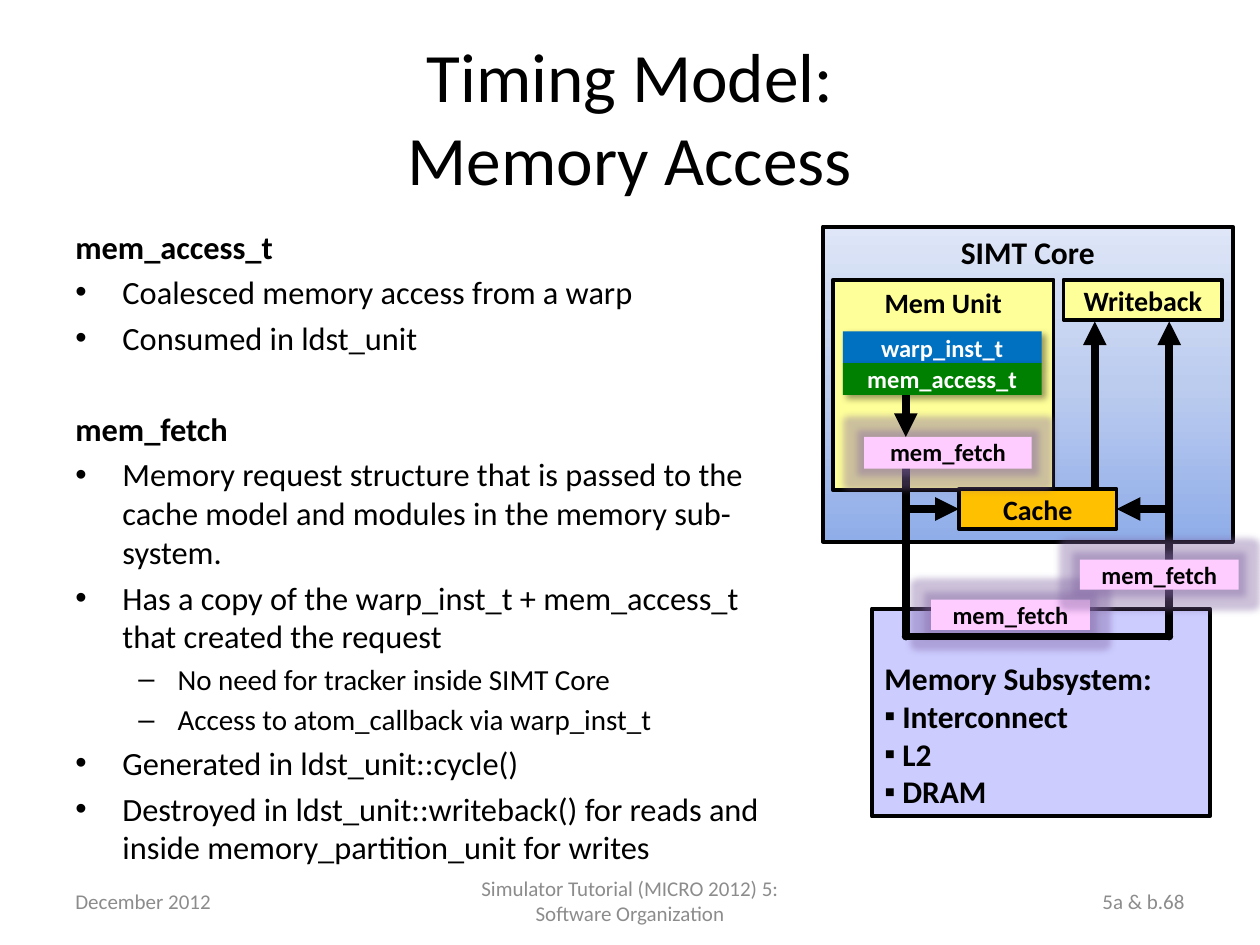
from copy import deepcopy

from lxml import etree
from pptx import Presentation
from pptx.dml.color import RGBColor
from pptx.enum.shapes import MSO_CONNECTOR, MSO_SHAPE
from pptx.enum.text import MSO_ANCHOR, PP_ALIGN
from pptx.oxml import parse_xml
from pptx.oxml.ns import qn
from pptx.util import Cm, Pt

LEFT, CENTER, RIGHT = PP_ALIGN.LEFT, PP_ALIGN.CENTER, PP_ALIGN.RIGHT
TOP, MIDDLE, BOTTOM = MSO_ANCHOR.TOP, MSO_ANCHOR.MIDDLE, MSO_ANCHOR.BOTTOM
RECTANGLE, STRAIGHT = MSO_SHAPE.RECTANGLE, MSO_CONNECTOR.STRAIGHT

FONT = "Calibri"
COLORS = {
    "black": "000000",
    "white": "FFFFFF",
    "gray": "8C8C8C",
    "lavender": "CCCCFF",
    "yellow": "FFFF99",
    "orange": "FFC000",
    "pink": "FFCCFF",
    "blue": "0070C0",
    "green": "008000",
    "glow": "8064A2",
    "core_bottom": "8FADE9",
    "core_middle": "BCCCEF",
    "core_top": "DEE6F7",
}
BODY = [
    ("heading", "mem_access_t"),
    ("bullet", "Coalesced memory access from a warp"),
    ("bullet", "Consumed in ldst_unit"),
    ("heading", "mem_fetch"),
    ("bullet", "Memory request structure that is passed to the cache model "
               "and modules in the memory sub-system."),
    ("bullet", "Has a copy of the warp_inst_t + mem_access_t that created the request"),
    ("dash", "No need for tracker inside SIMT Core"),
    ("dash", "Access to atom_callback via warp_inst_t"),
    ("bullet", "Generated in ldst_unit::cycle()"),
    ("bullet", "Destroyed in ldst_unit::writeback() for reads and "
               "inside memory_partition_unit for writes"),
]
BODY_STYLES = {
    "heading": (18.5, True, None, 0.95, 0.95),
    "bullet": (18.5, False, "•", 0.95, 0.95),
    "dash": (16.6, False, "–", 2.06, 0.79),
}
MEM_FETCH_BOXES = {
    "subsystem": (18.77, 12.09, 3.2, 0.61),
    "unit": (17.42, 8.81, 3.38, 0.64),
    "return": (21.77, 11.28, 3.2, 0.61),
}
REQUEST_X, RETURN_X, CACHE_Y, TURN_Y = 18.26, 23.57, 10.26, 12.83
WRITEBACK_BOTTOM = 6.48


def rgb(name):
    return RGBColor.from_string(COLORS[name])


def style_paragraph(paragraph, size, color="black", bold=False, align=LEFT):
    font = paragraph.font
    font.name, font.size, font.bold = FONT, Pt(size), bold
    font.color.rgb = rgb(color)
    paragraph.alignment = align


def add_bullet(paragraph, character, margin, hanging):
    properties = paragraph._p.get_or_add_pPr()
    properties.set("marL", str(Cm(margin)))
    properties.set("indent", str(-Cm(hanging)))
    if character:
        bullet_font = etree.SubElement(properties, qn("a:buFont"))
        bullet_font.set("typeface", "Arial")
        etree.SubElement(properties, qn("a:buChar")).set("char", character)


def add_effect(shape, kind, color, alpha, **attributes):
    effects = shape._element.spPr.get_or_add_effectLst()
    effect = etree.SubElement(effects, qn(f"a:{kind}"))
    for name, value in attributes.items():
        effect.set(name, str(value))
    tint = etree.SubElement(effect, qn("a:srgbClr"), val=COLORS[color])
    etree.SubElement(tint, qn("a:alpha"), val=str(alpha * 1000))


def set_title(slide):
    title = slide.shapes.title
    title.left, title.top, title.width, title.height = Cm(1.27), Cm(0.76), Cm(22.86), Cm(3.18)
    title.text_frame.text = "Timing Model:\vMemory Access"
    title.text_frame.vertical_anchor = MIDDLE
    style_paragraph(title.text_frame.paragraphs[0], 39.6, align=CENTER)


def add_text_box(slide, box):
    frame = slide.shapes.add_textbox(*map(Cm, box)).text_frame
    frame.word_wrap = True
    return frame


def add_body(slide):
    frame = add_text_box(slide, (1.27, 4.45, 15.09, 12.57))
    for index, (kind, text) in enumerate(BODY):
        paragraph = frame.add_paragraph() if index else frame.paragraphs[0]
        size, bold, character, margin, hanging = BODY_STYLES[kind]
        paragraph.text = text
        style_paragraph(paragraph, size, bold=bold)
        paragraph.space_before = Pt(30 if index and kind == "heading" else 0.2 * size)
        add_bullet(paragraph, character, margin, hanging)


def add_footer(slide, left, width, text, align):
    frame = add_text_box(slide, (left, 17.65, width, 1.02))
    frame.vertical_anchor = MIDDLE
    frame.text = text
    style_paragraph(frame.paragraphs[0], 12, "gray", align=align)


def add_box(slide, box, text, size, fill, font_color="black", outlined=True,
            anchor=MIDDLE, align=CENTER):
    shape = slide.shapes.add_shape(RECTANGLE, *map(Cm, box))
    shape.shadow.inherit = False
    shape.fill.solid()
    shape.fill.fore_color.rgb = rgb(fill)
    if outlined:
        shape.line.color.rgb = rgb("black")
        shape.line.width = Pt(2.25)
    else:
        shape.line.fill.background()
    frame = shape.text_frame
    frame.word_wrap = False
    frame.vertical_anchor = anchor
    frame.text = text
    for paragraph in frame.paragraphs:
        style_paragraph(paragraph, size, font_color, True, align)
    return shape


def add_core(slide):
    core = add_box(slide, (16.59, 4.57, 8.26, 6.35), "SIMT Core", 18, "core_top", anchor=TOP)
    core.fill.gradient()
    core.fill.gradient_angle = 90
    stops = core._element.spPr.find(qn("a:gradFill")).find(qn("a:gsLst"))
    stops.insert(1, deepcopy(stops[0]))
    names = ("core_bottom", "core_middle", "core_top")
    for stop, name, position in zip(core.fill.gradient_stops, names, (0, 0.5, 1)):
        stop.color.rgb = rgb(name)
        stop.position = position


def add_memory_subsystem(slide):
    text = "Memory Subsystem:\nInterconnect\nL2\nDRAM"
    shape = add_box(slide, (17.58, 12.27, 6.81, 4.19), text, 18, "lavender",
                    anchor=BOTTOM, align=LEFT)
    for paragraph in shape.text_frame.paragraphs[1:]:
        add_bullet(paragraph, "▪", 0.36, 0.36)


def add_mem_fetch(slide, place):
    shape = add_box(slide, MEM_FETCH_BOXES[place], "mem_fetch", 14, "pink",
                    outlined=False, anchor=TOP)
    frame = shape.text_frame
    frame.margin_left = frame.margin_top = frame.margin_right = frame.margin_bottom = 0
    add_effect(shape, "glow", "glow", 40, rad=Cm(0.28))


def add_structure(slide, top, text, fill):
    shape = add_box(slide, (16.99, top, 4.01, 0.64), text, 14, fill, "white", outlined=False)
    add_effect(shape, "outerShdw", "black", 40, blurRad=Pt(4), dist=Pt(3),
               dir=45 * 60000, algn="tl", rotWithShape=0)


def add_line(slide, start, end, arrow=False, rounded=False):
    line = slide.shapes.add_connector(STRAIGHT, *map(Cm, start + end))
    line.line.color.rgb = rgb("black")
    line.line.width = Pt(4.5)
    outline = line.line._get_or_add_ln()
    if rounded:
        outline.set("cap", "rnd")
    if arrow:
        etree.SubElement(outline, qn("a:tailEnd"), type="triangle")
    etree.SubElement(line._element.spPr, qn("a:effectLst"))
    return line


def add_diagram(slide):
    add_core(slide)
    add_memory_subsystem(slide)
    add_box(slide, (16.79, 5.64, 4.45, 4.24), "Mem Unit", 16, "yellow", anchor=TOP)
    add_box(slide, (21.44, 5.64, 3.2, 0.81), "Writeback", 16, "yellow")
    add_line(slide, (22.07, 9.86), (22.07, WRITEBACK_BOTTOM), arrow=True)
    add_mem_fetch(slide, "subsystem")
    cache = add_box(slide, (19.33, 9.86, 3.18, 0.8), "Cache", 16, "orange")
    add_line(slide, (REQUEST_X, 9.45), (REQUEST_X, TURN_Y), rounded=True)
    add_line(slide, (REQUEST_X, TURN_Y), (RETURN_X, TURN_Y), rounded=True)
    add_line(slide, (RETURN_X, TURN_Y), (RETURN_X, WRITEBACK_BOTTOM), arrow=True, rounded=True)
    fill_arrow = add_line(slide, (RETURN_X, CACHE_Y), (22.51, CACHE_Y), arrow=True)
    fill_arrow.end_connect(cache, 3)
    add_mem_fetch(slide, "unit")
    add_mem_fetch(slide, "return")
    lookup_arrow = add_line(slide, (REQUEST_X, CACHE_Y), (19.33, CACHE_Y), arrow=True)
    lookup_arrow.end_connect(cache, 1)
    add_structure(slide, 6.68, "warp_inst_t", "blue")
    add_structure(slide, 7.32, "mem_access_t", "green")
    add_line(slide, (REQUEST_X, 7.96), (REQUEST_X, 8.81), arrow=True)


def main():
    presentation = Presentation()
    presentation.slide_width, presentation.slide_height = Cm(25.4), Cm(19.05)
    slide = presentation.slides.add_slide(presentation.slide_layouts[5])
    set_title(slide)
    add_body(slide)
    add_footer(slide, 1.27, 5.93, "December 2012", LEFT)
    add_footer(slide, 8.68, 8.04, "Simulator Tutorial (MICRO 2012) 5: Software Organization", CENTER)
    add_footer(slide, 18.2, 5.93, "5a & b.68", RIGHT)
    add_diagram(slide)
    presentation.save("out.pptx")


if __name__ == "__main__":
    main()
